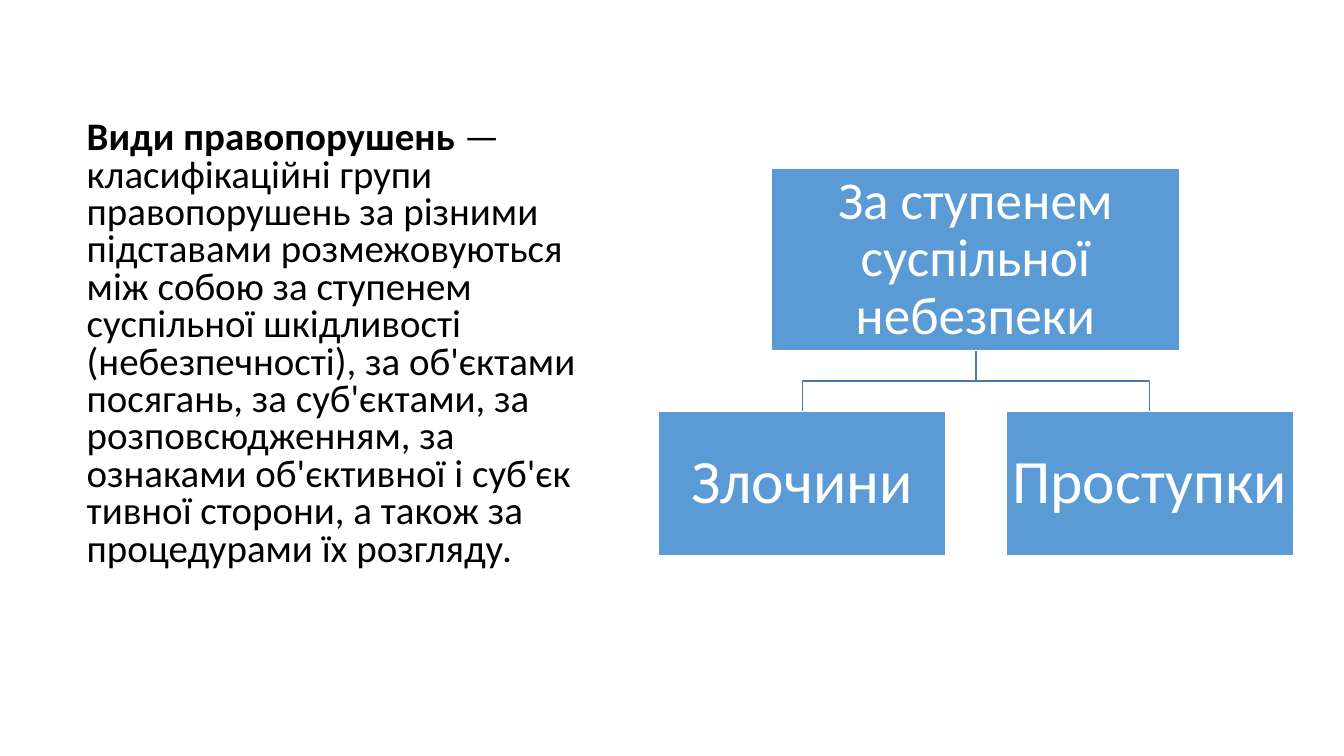
import dataclasses

import lxml.etree
import pptx
import pptx.dml.color
import pptx.enum.shapes
import pptx.enum.text
import pptx.oxml.ns
import pptx.util


@dataclasses.dataclass(frozen=True)
class Theme:
    font: str = "Calibri"
    ink: str = "000000"
    white: str = "FFFFFF"
    blue: str = "5B9BD5"
    link: str = "497CAB"
    body: float = 27.8
    root: float = 38
    leaf: float = 44


THEME = Theme()
WIDE, HIGH = 13.33, 7.5
MID = 9.68
ROOT_TOP, ROOT_WIDE, ROOT_HIGH = 1.67, 4.05, 1.81
GAP = 0.6
LEAF_WIDE, LEAF_HIGH = 2.85, 1.43
LEAF_TOP = ROOT_TOP + ROOT_HIGH + GAP
STEP = LEAF_WIDE + GAP

TERM = "Види правопорушень"
TEXT = (
    "\u00a0— класифікаційні групи правопорушень за різними підставами "
    "розмежовуються між собою за ступенем суспільної шкідливості "
    "(небезпечності), за об'єктами посягань, за\u00a0суб'єктами, "
    "за розповсюдженням, за ознаками\u00a0об'єктивної\u00a0і\u00a0суб'єктивної "
    "сторони, а також за процедурами їх розгляду."
)


def inch(size):
    return pptx.util.Inches(round(size, 2))


def tint(code):
    return pptx.dml.color.RGBColor.from_string(code)


def write(par, text, size, color, bold=False):
    run = par.add_run()
    run.text = text
    run.font.name = THEME.font
    run.font.size = pptx.util.Pt(size)
    run.font.bold = bold
    run.font.color.rgb = tint(color)


def add_body(slide):
    body = slide.placeholders[1]
    body.left, body.top = inch(0.057 * WIDE), inch(0.153 * HIGH)
    body.width, body.height = inch(0.38 * WIDE), inch(0.681 * HIGH)
    frame = body.text_frame
    frame.word_wrap = True
    frame.auto_size = pptx.enum.text.MSO_AUTO_SIZE.NONE
    par = frame.paragraphs[0]
    par.line_spacing = 0.8
    par.space_before = pptx.util.Pt(10)
    props = par._p.get_or_add_pPr()
    props.set("marL", "0")
    props.set("indent", "0")
    lxml.etree.SubElement(props, pptx.oxml.ns.qn("a:buNone"))
    write(par, TERM, THEME.body, THEME.ink, bold=True)
    write(par, TEXT, THEME.body, THEME.ink)


def add_box(slide, text, mid, top, wide, high, size):
    box = slide.shapes.add_shape(
        pptx.enum.shapes.MSO_SHAPE.RECTANGLE,
        inch(mid - wide / 2), inch(top), inch(wide), inch(high),
    )
    box.shadow.inherit = False
    box.fill.solid()
    box.fill.fore_color.rgb = tint(THEME.blue)
    box.line.color.rgb = tint(THEME.white)
    box.line.width = pptx.util.Pt(1)
    frame = box.text_frame
    frame.word_wrap = True
    frame.vertical_anchor = pptx.enum.text.MSO_ANCHOR.MIDDLE
    frame.margin_left = frame.margin_right = inch(0.03)
    frame.margin_top = frame.margin_bottom = inch(0.03)
    par = frame.paragraphs[0]
    par.alignment = pptx.enum.text.PP_ALIGN.CENTER
    par.line_spacing = 0.9
    write(par, text, size, THEME.white)


def add_branch(slide, mid):
    top = LEAF_TOP - GAP
    bend = LEAF_TOP - GAP / 2
    pen = slide.shapes.build_freeform(inch(MID), inch(top))
    turns = [(MID, bend), (mid, bend), (mid, LEAF_TOP)]
    pen.add_line_segments([(inch(x), inch(y)) for x, y in turns], close=False)
    branch = pen.convert_to_shape()
    branch.shadow.inherit = False
    branch.fill.background()
    branch.line.color.rgb = tint(THEME.link)
    branch.line.width = pptx.util.Pt(1)


def add_tree(slide, root, leaves):
    mids = [MID + (i - (len(leaves) - 1) / 2) * STEP for i in range(len(leaves))]
    for mid in mids:
        add_branch(slide, mid)
    add_box(slide, root, MID, ROOT_TOP, ROOT_WIDE, ROOT_HIGH, THEME.root)
    for leaf, mid in zip(leaves, mids):
        add_box(slide, leaf, mid, LEAF_TOP, LEAF_WIDE, LEAF_HIGH, THEME.leaf)


def main():
    deck = pptx.Presentation()
    deck.slide_width, deck.slide_height = inch(WIDE), inch(HIGH)
    slide = deck.slides.add_slide(deck.slide_layouts[1])
    title = slide.shapes.title.element
    title.getparent().remove(title)
    add_body(slide)
    add_tree(slide, "За ступенем суспільної небезпеки", ["Злочини", "Проступки"])
    deck.save("out.pptx")


if __name__ == "__main__":
    main()
